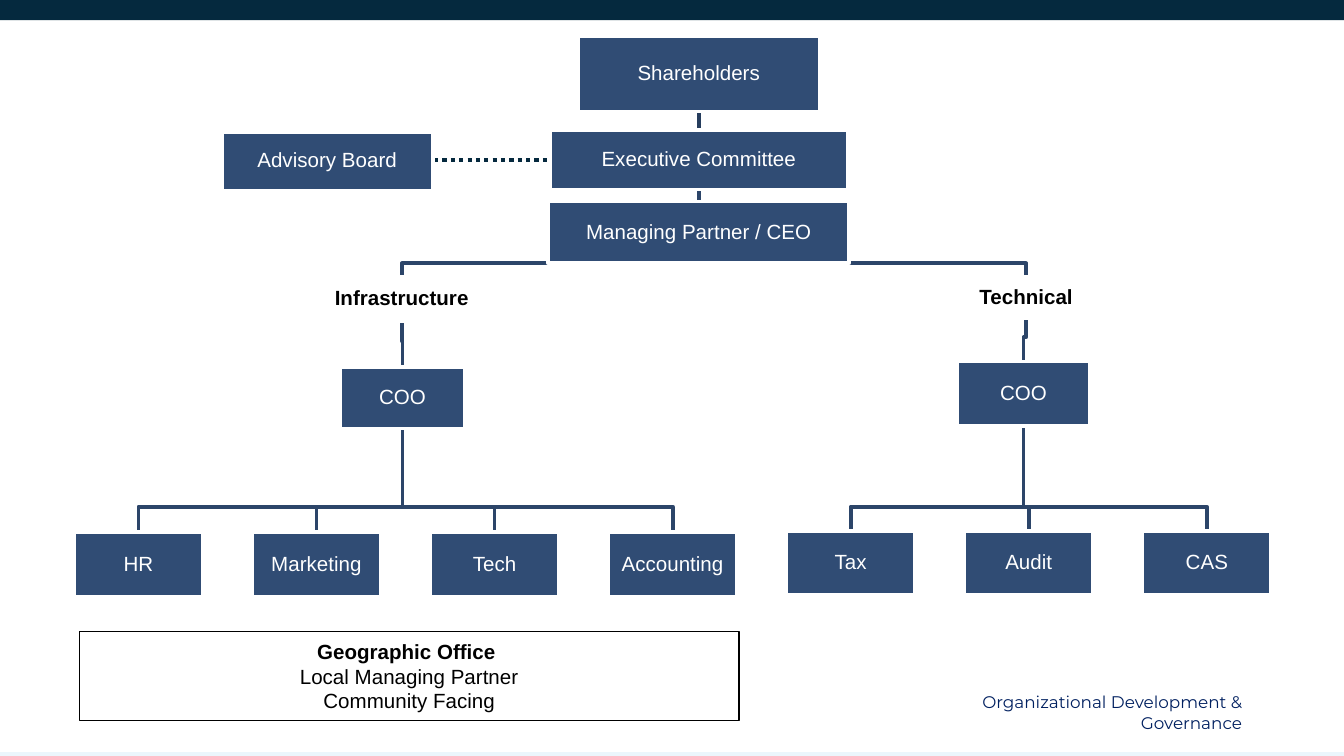
"""Build a one-slide organization chart for a professional services firm."""
from dataclasses import dataclass

from lxml import etree
from pptx import Presentation
from pptx.dml.color import RGBColor
from pptx.enum.dml import MSO_LINE
from pptx.enum.shapes import MSO_CONNECTOR, MSO_SHAPE
from pptx.enum.text import MSO_ANCHOR, PP_ALIGN
from pptx.oxml.ns import qn
from pptx.shapes.autoshape import Shape
from pptx.shapes.connector import Connector
from pptx.slide import Slide
from pptx.util import Inches, Pt

STRAIGHT = MSO_CONNECTOR.STRAIGHT
RECTANGLE = MSO_SHAPE.RECTANGLE
DOTTED = MSO_LINE.ROUND_DOT
MIDDLE = MSO_ANCHOR.MIDDLE
CENTER, RIGHT = PP_ALIGN.CENTER, PP_ALIGN.RIGHT
TOP_SIDE, LEFT_SIDE, BOTTOM_SIDE = range(3)

WHITE = RGBColor(0xFF, 0xFF, 0xFF)
BLACK = RGBColor(0x00, 0x00, 0x00)
PALE_BLUE = RGBColor(0xEB, 0xF6, 0xFC)
DARK_TEAL = RGBColor(0x05, 0x29, 0x3E)
BOX_BLUE = RGBColor(0x30, 0x4C, 0x74)
LINK_BLUE = RGBColor(0x2C, 0x45, 0x69)
TOP_LINK_BLUE = RGBColor(0x26, 0x3D, 0x5D)
FOOTER_BLUE = RGBColor(0x00, 0x20, 0x60)


@dataclass(frozen=True)
class Unit:
    """A box or a bold heading of the chart, measured in inches."""

    text: str
    left: float
    top: float
    width: float
    height: float
    heading: bool = False

    @property
    def center(self) -> float:
        return self.left + self.width / 2

    @property
    def bottom(self) -> float:
        return self.top + self.height


@dataclass(frozen=True)
class Link:
    """A straight line from a point, or the bottom of a box, to a box."""

    start: Unit | tuple[float, float]
    end: Unit
    end_side: int
    color: RGBColor
    weight: float = 2
    dotted: bool = False


DEPARTMENT_LEFT, DEPARTMENT_PITCH = 0.55, (8.5 - 0.55) / 6


def department(name: str, column: int, top: float) -> Unit:
    """Place a department in its column of the bottom row."""
    return Unit(name, DEPARTMENT_LEFT + column * DEPARTMENT_PITCH, top, 0.96, 0.48)


SHAREHOLDERS = Unit("Shareholders", 4.3, 0.27, 1.8, 0.56)
COMMITTEE = Unit("Executive Committee", 4.09, 0.97, 2.22, 0.44)
CEO = Unit("Managing Partner / CEO", 4.08, 1.5, 2.24, 0.46)
ADVISORY = Unit("Advisory Board", 1.65, 0.98, 1.57, 0.44)
INFRASTRUCTURE = Unit("Infrastructure", 1.61, 2.06, 2.76, 0.33, heading=True)
TECHNICAL = Unit("Technical", 6.76, 2.06, 1.75, 0.31, heading=True)
INFRASTRUCTURE_COO = Unit("COO", 2.53, 2.73, 0.93, 0.46)
TECHNICAL_COO = Unit("COO", 7.12, 2.69, 0.99, 0.48)
INFRASTRUCTURE_TEAMS = [
    department(name, column, 3.96)
    for column, name in enumerate(("HR", "Marketing", "Tech", "Accounting"))
]
TECHNICAL_TEAMS = [
    department(name, column, 3.95)
    for column, name in enumerate(("Tax", "Audit", "CAS"), start=4)
]
UNITS = [
    SHAREHOLDERS, COMMITTEE, CEO, INFRASTRUCTURE, INFRASTRUCTURE_COO,
    *INFRASTRUCTURE_TEAMS, TECHNICAL, TECHNICAL_COO, *TECHNICAL_TEAMS, ADVISORY,
]
BRANCHES = [
    (TECHNICAL_COO, 3.77, TECHNICAL_TEAMS),
    (TECHNICAL, 2.51, [TECHNICAL_COO]),
    (INFRASTRUCTURE_COO, 3.77, INFRASTRUCTURE_TEAMS),
    (INFRASTRUCTURE, 2.54, [INFRASTRUCTURE_COO]),
    (CEO, CEO.bottom, [INFRASTRUCTURE, TECHNICAL]),
]
LINKS = [
    Link(COMMITTEE, CEO, TOP_SIDE, LINK_BLUE),
    Link(SHAREHOLDERS, COMMITTEE, TOP_SIDE, TOP_LINK_BLUE),
    Link((3.23, 1.19), COMMITTEE, LEFT_SIDE, DARK_TEAL, 2.25, dotted=True),
]


def add_rectangle(slide: Slide, left: float, top: float, width: float, height: float,
                  fill: RGBColor | None, line: RGBColor | None = None,
                  weight: float = 0.75) -> Shape:
    """Add a rectangle with an optional fill and outline."""
    shape = slide.shapes.add_shape(
        RECTANGLE, Inches(left), Inches(top), Inches(width), Inches(height))
    shape.shadow.inherit = False
    if fill is None:
        shape.fill.background()
    else:
        shape.fill.solid()
        shape.fill.fore_color.rgb = fill
    if line is None:
        shape.line.fill.background()
    else:
        shape.line.color.rgb = line
        shape.line.width = Pt(weight)
    return shape


def write(shape: Shape, lines: list[str], color: RGBColor, align: PP_ALIGN = CENTER,
          size: float = 11, font: str = "Arial", bold_first: bool = False,
          spacing: float = 1.0, insets: tuple[float, float] = (0.1, 0.05)) -> None:
    """Write one paragraph per line, anchored in the middle of the shape."""
    frame = shape.text_frame
    frame.word_wrap = True
    frame.vertical_anchor = MIDDLE
    frame.margin_left = frame.margin_right = Inches(insets[0])
    frame.margin_top = frame.margin_bottom = Inches(insets[1])
    frame.text = "\n".join(lines)
    for index, paragraph in enumerate(frame.paragraphs):
        paragraph.alignment = align
        paragraph.line_spacing = spacing
        paragraph.font.name = font
        paragraph.font.size = Pt(size)
        paragraph.font.bold = bold_first and index == 0
        paragraph.font.color.rgb = color


def add_branch(slide: Slide, parent: Unit, turn: float, child: Unit) -> None:
    """Draw an elbow line from a parent down to a child."""
    builder = slide.shapes.build_freeform(Inches(parent.center), Inches(parent.bottom))
    points = [(parent.center, turn), (child.center, turn), (child.center, child.top)]
    builder.add_line_segments([(Inches(x), Inches(y)) for x, y in points], close=False)
    shape = builder.convert_to_shape()
    shape.shadow.inherit = False
    shape.fill.background()
    shape.line.color.rgb = LINK_BLUE
    shape.line.width = Pt(2)


def add_link(slide: Slide, link: Link) -> Connector:
    """Add a styled connector whose ends are joined once the boxes exist."""
    start = link.start
    x, y = (start.center, start.bottom) if isinstance(start, Unit) else start
    connector = slide.shapes.add_connector(
        STRAIGHT, Inches(x), Inches(y), Inches(x), Inches(y))
    connector.line.color.rgb = link.color
    connector.line.width = Pt(link.weight)
    if link.dotted:
        connector.line.dash_style = DOTTED
    etree.SubElement(connector.element.spPr, qn("a:effectLst"))
    return connector


def add_unit(slide: Slide, unit: Unit) -> Shape:
    """Draw a chart box, or an unfilled heading."""
    shape = add_rectangle(slide, unit.left, unit.top, unit.width, unit.height,
                          None if unit.heading else BOX_BLUE, WHITE, 2)
    write(shape, [unit.text], BLACK if unit.heading else WHITE,
          bold_first=unit.heading, spacing=0.9, insets=(0.01, 0.01))
    return shape


def main() -> None:
    """Assemble and save the presentation."""
    presentation = Presentation()
    presentation.slide_width, presentation.slide_height = Inches(10), Inches(5.625)
    slide = presentation.slides.add_slide(presentation.slide_layouts[6])

    add_rectangle(slide, 0, 4.98, 10, 0.65, PALE_BLUE)
    add_rectangle(slide, 0, 0, 10, 0.15, DARK_TEAL)
    add_rectangle(slide, 0, 4.97, 10, 0.62, WHITE, WHITE)
    footer = slide.shapes.add_textbox(Inches(7.06), Inches(5.15), Inches(2.25), Inches(0.3))
    write(footer, ["Organizational Development & Governance"], FOOTER_BLUE, RIGHT,
          9, "Montserrat", insets=(0.07, 0.04))

    for parent, turn, children in BRANCHES:
        for child in children:
            add_branch(slide, parent, turn, child)
    connectors = [add_link(slide, link) for link in LINKS]
    boxes = {unit: add_unit(slide, unit) for unit in UNITS}
    for connector, link in zip(connectors, LINKS):
        if isinstance(link.start, Unit):
            connector.begin_connect(boxes[link.start], BOTTOM_SIDE)
        connector.end_connect(boxes[link.end], link.end_side)

    office = add_rectangle(slide, 0.59, 4.7, 4.91, 0.66, WHITE, BLACK)
    write(office, ["Geographic Office ", "Local Managing Partner", "Community Facing"],
          BLACK, bold_first=True)
    presentation.save("out.pptx")


if __name__ == "__main__":
    main()
